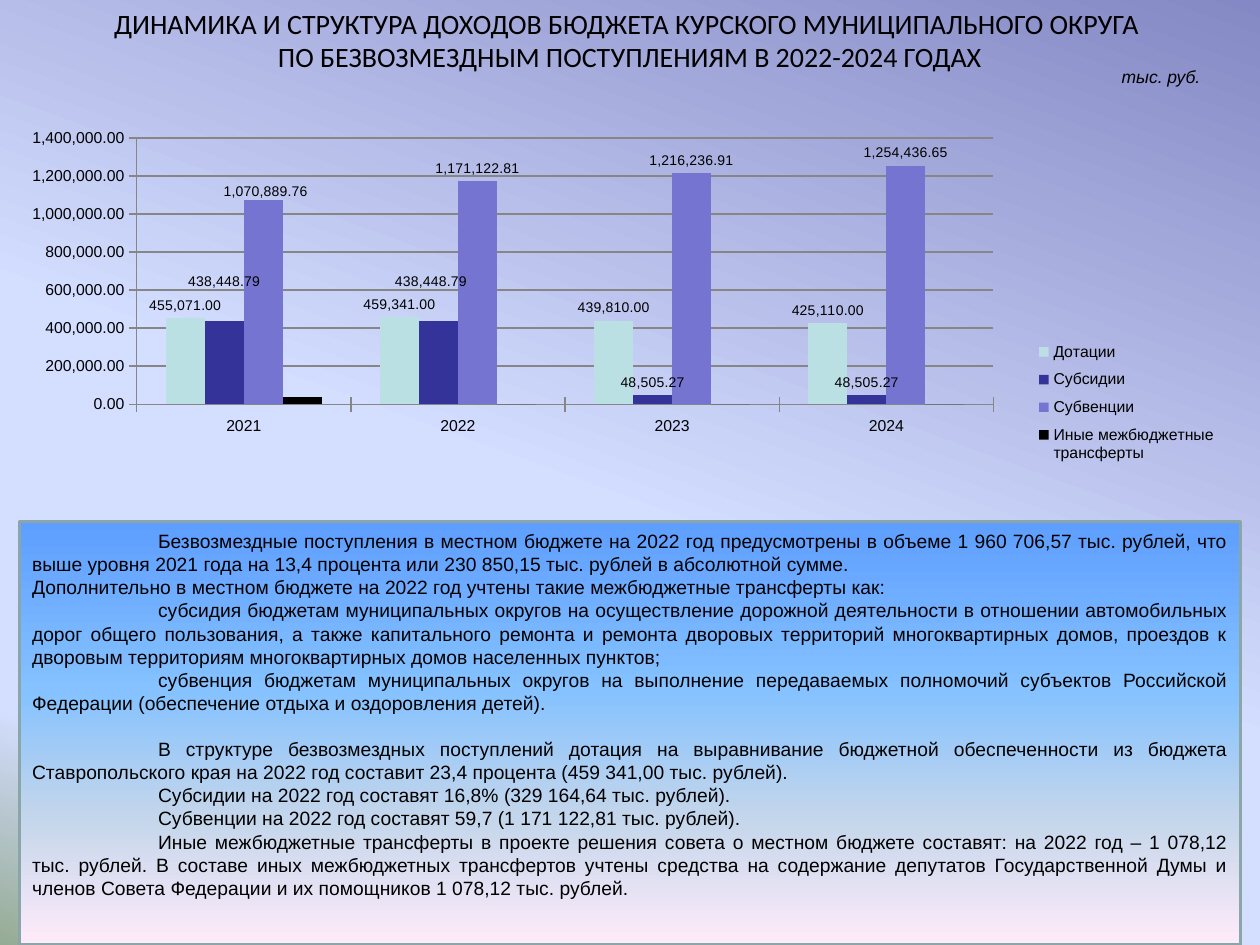
from collections import namedtuple

from lxml.etree import SubElement
from pptx import Presentation
from pptx.chart.data import CategoryChartData
from pptx.dml.color import RGBColor
from pptx.enum.chart import XL_CHART_TYPE as ChartType
from pptx.enum.chart import XL_LABEL_POSITION as LabelPosition
from pptx.enum.chart import XL_LEGEND_POSITION as LegendPosition
from pptx.enum.chart import XL_TICK_MARK as TickMark
from pptx.enum.shapes import MSO_SHAPE as Preset
from pptx.enum.text import MSO_ANCHOR as Anchor
from pptx.enum.text import PP_ALIGN as Align
from pptx.oxml.ns import qn
from pptx.util import Inches, Pt

Box = namedtuple("Box", "left top width height")

WIDTH, HEIGHT = Inches(10), Inches(7.5)
COLUMN, ROW = WIDTH / 100, HEIGHT / 100

BLACK = RGBColor(0x00, 0x00, 0x00)
GRID_GREY = RGBColor(0x86, 0x86, 0x86)
PANEL_EDGE = RGBColor(0x8A, 0xA6, 0xA8)
AQUA = RGBColor(0xBB, 0xE0, 0xE3)
NAVY = RGBColor(0x33, 0x33, 0x99)
VIOLET = RGBColor(0x75, 0x75, 0xD1)
SKY = (
    (0, RGBColor(0x84, 0x88, 0xC4)),
    (53, RGBColor(0xD4, 0xDE, 0xFF)),
    (83, RGBColor(0xD4, 0xDE, 0xFF)),
    (100, RGBColor(0x96, 0xAB, 0x94)),
)
DAWN = (
    (0, RGBColor(0x5E, 0x9E, 0xFF)),
    (40, RGBColor(0x85, 0xC2, 0xFF)),
    (70, RGBColor(0xC4, 0xD6, 0xEB)),
    (100, RGBColor(0xFF, 0xEB, 0xFA)),
)

YEARS = ("2021", "2022", "2023", "2024")
INCOME = (
    ("Дотации", (455071, 459341, 439810, 425110), AQUA, True),
    ("Субсидии", (438448.79, 438448.79, 48505.27, 48505.27), NAVY, True),
    ("Субвенции", (1070889.76, 1171122.81, 1216236.91, 1254436.65), VIOLET, True),
    ("Иные межбюджетные трансферты", (40000, 0, 0, 0), BLACK, False),
)
LABEL_SHIFTS = ((1, 0, 0, -7), (1, 1, -0.6, -7), (2, 0, 0.2, 0.9))

TITLE = (
    "ДИНАМИКА И СТРУКТУРА ДОХОДОВ БЮДЖЕТА КУРСКОГО МУНИЦИПАЛЬНОГО ОКРУГА ",
    "ПО БЕЗВОЗМЕЗДНЫМ ПОСТУПЛЕНИЯМ В 2022-2024 ГОДАХ",
)
LEAD_IN = "Дополнительно в местном бюджете на 2022 год учтены такие межбюджетные трансферты как:"
STRUCTURE = (
    "В структуре безвозмездных поступлений дотация на выравнивание бюджетной обеспеченности "
    "из бюджета Ставропольского края на 2022 год составит 23,4 процента (459 341,00 тыс. рублей)."
)
COMMENTARY = (
    "Безвозмездные поступления в местном бюджете на 2022 год предусмотрены в объеме "
    "1 960 706,57 тыс. рублей, что выше уровня 2021 года на 13,4 процента или "
    "230 850,15 тыс. рублей в абсолютной сумме. ",
    LEAD_IN,
    "субсидия бюджетам муниципальных округов на осуществление дорожной деятельности в отношении "
    "автомобильных дорог общего пользования, а также капитального ремонта и ремонта дворовых "
    "территорий многоквартирных домов, проездов к дворовым территориям многоквартирных домов "
    "населенных пунктов;",
    "субвенция бюджетам муниципальных округов на выполнение передаваемых полномочий субъектов "
    "Российской Федерации (обеспечение отдыха и оздоровления детей).",
    STRUCTURE,
    "Субсидии на 2022 год составят 16,8% (329 164,64 тыс. рублей).",
    "Субвенции на 2022 год составят 59,7 (1 171 122,81 тыс. рублей).",
    "Иные межбюджетные трансферты в проекте решения совета о местном бюджете составят: "
    "на 2022 год – 1 078,12 тыс. рублей. В составе иных межбюджетных трансфертов учтены средства "
    "на содержание депутатов Государственной Думы и членов Совета Федерации и их помощников "
    "1 078,12 тыс. рублей.",
)


def grid_box(column, row, columns, rows):
    """Turn grid columns and rows into a box in slide units."""
    return Box(int(column * COLUMN), int(row * ROW), int(columns * COLUMN), int(rows * ROW))


def paint_gradient(fill, owner, stops, angle):
    """Give a fill the listed stops along a clockwise angle."""
    fill.gradient()
    fill.gradient_angle = 360 - angle
    stop_list = next(owner.iter(qn("a:gsLst")))
    for stop in list(stop_list):
        stop_list.remove(stop)
    for percent, color in stops:
        stop = SubElement(stop_list, qn("a:gs"), pos=str(percent * 1000))
        SubElement(stop, qn("a:srgbClr"), val=str(color))


def add_text(slide, box, lines, size, font_name, align, italic=False):
    """Place wrapped black paragraphs in a box and return their frame."""
    frame = slide.shapes.add_textbox(*box).text_frame
    frame.word_wrap = True
    frame.text = "\n".join(lines)
    for paragraph in frame.paragraphs:
        paragraph.alignment = align
        font = paragraph.font
        font.size, font.name, font.italic = Pt(size), font_name, italic
        font.color.rgb = BLACK
    return frame


def set_layout(parent, after, **percents):
    """Fix a chart part by percentages of the chart area."""
    for previous in parent.findall(qn("c:layout")):
        parent.remove(previous)
    layout = parent.makeelement(qn("c:layout"))
    parent.find(qn(after)).addnext(layout) if after else parent.insert(0, layout)
    manual = SubElement(layout, qn("c:manualLayout"))
    if "target" in percents:
        SubElement(manual, qn("c:layoutTarget"), val=percents.pop("target"))
    if "w" in percents:
        for mode in ("c:xMode", "c:yMode"):
            SubElement(manual, qn(mode), val="edge")
    for side, percent in percents.items():
        SubElement(manual, qn(f"c:{side}"), val=str(percent / 100))


def add_income_chart(slide, box):
    """Draw the clustered columns of transfers by year."""
    data = CategoryChartData(number_format="#,##0.00")
    data.categories = YEARS
    for name, values, _, _ in INCOME:
        data.add_series(name, values)
    chart = slide.shapes.add_chart(ChartType.COLUMN_CLUSTERED, *box, data).chart
    chart.has_title = False
    chart.font.size, chart.font.name = Pt(9), "Arial"
    chart.font.color.rgb = BLACK

    plot = chart.plots[0]
    plot.gap_width, plot.overlap, plot.vary_by_categories = 150, 0, False
    for series, (_, _, color, labelled) in zip(plot.series, INCOME):
        series.format.fill.solid()
        series.format.fill.fore_color.rgb = color
        series.invert_if_negative = False
        if labelled:
            labels = series.data_labels
            labels.show_value, labels.position = True, LabelPosition.OUTSIDE_END
            labels.font.size = Pt(8)
            for leader in labels._element.iter(qn("c:showLeaderLines")):
                leader.set("val", "0")
    for series_index, year_index, x, y in LABEL_SHIFTS:
        series = plot.series[series_index]
        label = series.points[year_index].data_label
        label.position = LabelPosition.OUTSIDE_END
        label.font.size = Pt(8)
        point_label = series.data_labels._element.findall(qn("c:dLbl"))[year_index]
        set_layout(point_label, "c:idx", x=x, y=y)

    amounts = chart.value_axis
    amounts.minimum_scale, amounts.maximum_scale, amounts.major_unit = 0, 1400000, 200000
    amounts.tick_labels.number_format = "#,##0.00"
    amounts.tick_labels.number_format_is_linked = False
    for axis in (chart.category_axis, amounts):
        axis.major_tick_mark = TickMark.CROSS
        axis.format.line.color.rgb = GRID_GREY
    amounts.major_gridlines.format.line.color.rgb = GRID_GREY

    chart.has_legend = True
    chart.legend.position = LegendPosition.RIGHT
    chart.legend.include_in_layout = False
    set_layout(chart.legend._element, "c:legendPos", x=80.9, y=60.6, w=17, h=35.6)
    plot_area = next(chart._chartSpace.iter(qn("c:plotArea")))
    set_layout(plot_area, None, target="inner", x=10.85, y=10.2, w=68, h=68.6)


def add_commentary(slide, box):
    """Draw the gradient panel and its justified explanation."""
    panel = slide.shapes.add_shape(Preset.RECTANGLE, *box)
    panel.shadow.inherit = False
    paint_gradient(panel.fill, panel._element, DAWN, 90)
    panel.line.color.rgb, panel.line.width = PANEL_EDGE, Pt(2)
    text_box = box._replace(height=int(box.height * 0.91))
    frame = add_text(slide, text_box, COMMENTARY, 11, "Arial", Align.JUSTIFY)
    frame.vertical_anchor = Anchor.MIDDLE
    for paragraph in frame.paragraphs:
        if paragraph.text != LEAD_IN:
            paragraph._p.get_or_add_pPr().set("indent", str(Inches(1)))
        if paragraph.text == STRUCTURE:
            paragraph.space_before = Pt(13.2)


def main():
    """Build the slide of budget transfers and save it."""
    deck = Presentation()
    deck.slide_width, deck.slide_height = WIDTH, HEIGHT
    slide = deck.slides.add_slide(deck.slide_layouts[6])
    paint_gradient(slide.background.fill, slide._element, SKY, 110)
    add_commentary(slide, grid_box(1.56, 55.2, 96.9, 44.8))
    add_text(slide, grid_box(0, 0, 100, 8.5), TITLE, 16, "Calibri", Align.CENTER)
    add_text(slide, grid_box(84.3, 6.3, 15.7, 3.6), ("тыс. руб.",), 10, "Arial", Align.CENTER, True)
    add_income_chart(slide, grid_box(0, 10.4, 100, 41.1))
    deck.save("out.pptx")


if __name__ == "__main__":
    main()
